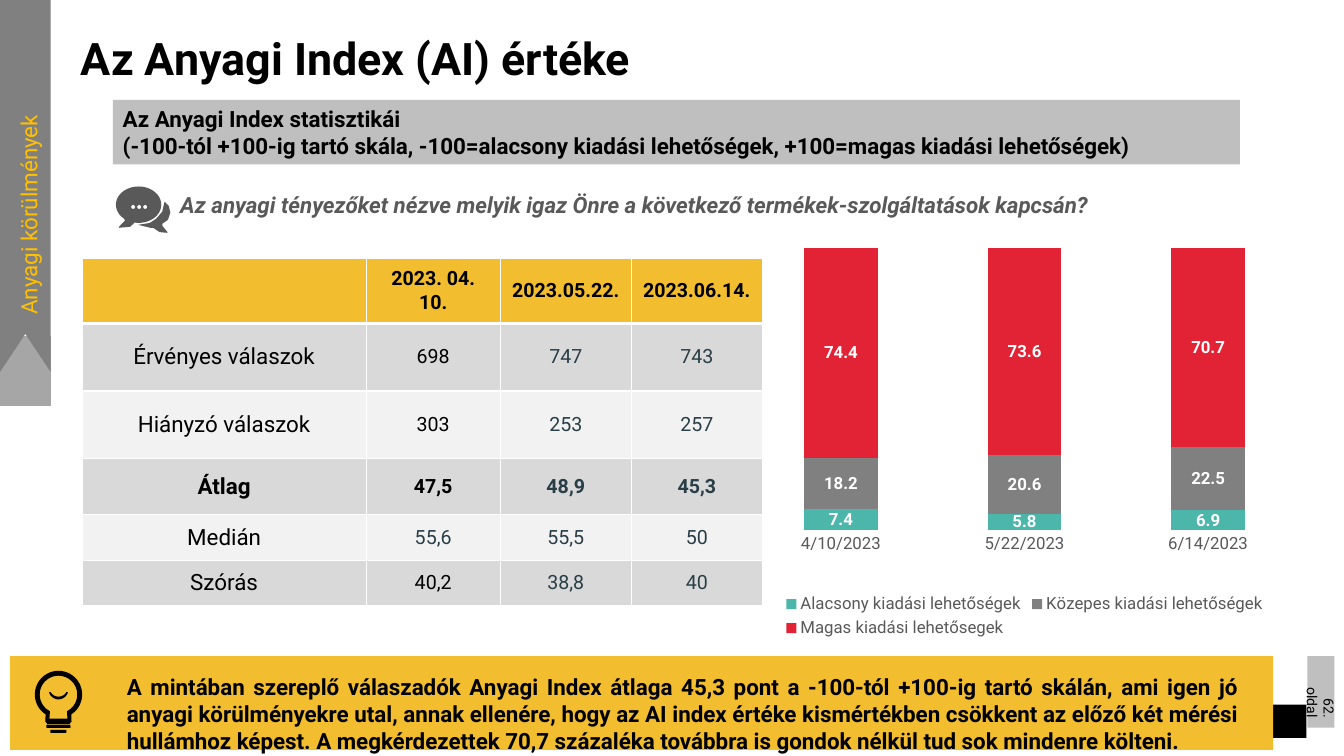
from math import cos, sin, radians

from lxml.etree import SubElement
from pptx import Presentation
from pptx.chart.data import CategoryChartData as ChartData
from pptx.dml.color import RGBColor as RGB
from pptx.enum.chart import XL_CHART_TYPE as Kind, XL_LABEL_POSITION as Spot
from pptx.enum.chart import XL_LEGEND_POSITION as Side, XL_TICK_MARK as Tick
from pptx.enum.shapes import MSO_SHAPE as Form
from pptx.enum.text import MSO_ANCHOR as Anchor, PP_ALIGN as Align
from pptx.oxml import parse_xml
from pptx.oxml.ns import nsdecls, qn
from pptx.util import Pt

FONT = "Roboto"
HUES = {
    "black": "000000", "white": "FFFFFF", "gold": "F2BE30", "amber": "FFC000",
    "dark": "595959", "mid": "808080", "soft": "A6A6A6", "light": "BFBFBF",
    "band": "D9D9D9", "pale": "F2F2F2", "slate": "293E47",
    "teal": "4BB6A9", "red": "E22335",
}
ROWS = [
    ("", "2023. 04. 10.", "2023.05.22.", "2023.06.14."),
    ("Érvényes válaszok", "698", "747", "743"),
    ("Hiányzó válaszok", "303", "253", "257"),
    ("Átlag", "47,5", "48,9", "45,3"),
    ("Medián", "55,6", "55,5", "50"),
    ("Szórás", "40,2", "38,8", "40"),
]
DATES = ("4/10/2023", "5/22/2023", "6/14/2023")
SERIES = [
    ("Alacsony kiadási lehetőségek", (7.4, 5.8, 6.9), "teal"),
    ("Közepes kiadási lehetőségek", (18.2, 20.6, 22.5), "mid"),
    ("Magas kiadási lehetősegek", (74.4, 73.6, 70.7), "red"),
]
INSIGHT = (
    "A mintában szereplő válaszadók Anyagi Index átlaga 45,3 pont a -100-tól "
    "+100-ig tartó skálán, ami igen jó anyagi körülményekre utal, annak ellenére, "
    "hogy az AI index értéke kismértékben csökkent az előző két mérési hullámhoz "
    "képest. A megkérdezettek 70,7 százaléka továbbra is gondok nélkül tud sok "
    "mindenre költeni."
)


def hue(name):
    """Return the named colour."""
    return RGB.from_string(HUES[name])


def style(font, size, color, bold=False, italic=False):
    """Set the look of a font."""
    font.name, font.size = FONT, Pt(size)
    font.bold, font.italic = bold, italic
    font.color.rgb = hue(color)


def paint(shape, color):
    """Fill a shape and drop its line and shadow."""
    shape.shadow.inherit = False
    shape.fill.solid()
    shape.fill.fore_color.rgb = hue(color)
    shape.line.fill.background()


def write(shape, text, size, color, bold=False, italic=False, align=Align.LEFT):
    """Put one styled paragraph into a shape."""
    frame = shape.text_frame
    frame.word_wrap = True
    frame.text = text
    para = frame.paragraphs[0]
    para.alignment = align
    for run in para.runs:
        style(run.font, size, color, bold, italic)
    return frame


def block(slide, box, color, form=Form.RECTANGLE):
    """Add a filled preset shape."""
    shape = slide.shapes.add_shape(form, *map(Pt, box))
    paint(shape, color)
    return shape


def label(slide, box, *args, **looks):
    """Add a text box and return it."""
    shape = slide.shapes.add_textbox(*map(Pt, box))
    write(shape, *args, **looks)
    return shape


def arc(x, y, wide, high, start, end):
    """List points along an ellipse between two angles."""
    turns = [radians(start + (end - start) * i / 40) for i in range(41)]
    return [(x + wide * cos(t), y + high * sin(t)) for t in turns]


def trace(slide, color, *loops):
    """Draw closed outlines as one shape; inner loops are holes."""
    fine = [[(x * 100, y * 100) for x, y in loop] for loop in loops]
    pen = slide.shapes.build_freeform(*fine[0][0], scale=Pt(1) / 100)
    pen.add_line_segments(fine[0][1:])
    for loop in fine[1:]:
        pen.move_to(*loop[0])
        pen.add_line_segments(loop[1:])
    paint(pen.convert_to_shape(), color)


def ribbon(slide):
    """Draw the side ribbon with its section name."""
    trace(slide, "soft", [(0, 290), (36.2, 290), (36.2, 240), (0, 240)])
    trace(slide, "mid", [(0, 265.7), (18.1, 238.5), (36.2, 265.7), (36.2, 0), (0, 0)])
    name = label(slide, (-79.2, 118.8, 199.4, 26.6), "Anyagi körülmények", 16, "amber")
    name.rotation = 270


def bulb(slide):
    """Draw the smiling light bulb."""
    x, y = 41.8, 496.1
    trace(
        slide, "black",
        arc(x, y, 16.9, 16.9, 123, 417) + [(51.1, 515.5), (49.7, 517), (33.8, 517), (32.4, 515.5)],
        arc(x, y, 13.4, 13.4, 117, 423) + [(48.2, 513.4), (35.3, 513.4)],
        arc(x, 492, 7.2, 7.6, 160, 20) + arc(x, 492, 6.2, 5.6, 25, 155),
    )
    block(slide, (33.1, 517.7, 17.3, 2.2), "black", Form.ROUNDED_RECTANGLE)
    block(slide, (36, 521.3, 11.5, 2.2), "black", Form.ROUNDED_RECTANGLE)


def chat(slide):
    """Draw the two speech bubbles."""
    trace(slide, "dark", [
        (98.6, 160.6), (107, 159.3), (111.6, 156.2), (115.9, 151.2), (117.4, 144.7),
        (117.4, 144), (120.5, 147), (121.7, 151.9), (120, 157), (116, 159.8),
        (116, 161.3), (119.5, 165.6), (119.5, 166.3), (114, 165.8),
        (109.4, 162.7), (107.3, 162.7)])
    tail = [(92.9, 162), (85, 162.7), (85, 162), (89.3, 157.5)]
    dots = [arc(99.4 + gap, 147.8, 1.4, 1.4, 0, 360) for gap in (-4.3, 0, 4.3)]
    trace(slide, "dark", arc(99, 146.2, 16.2, 13, 130, 460) + tail, *dots)


def edge(cell, base):
    """Give a cell white borders, with its own width at the base."""
    props = cell._tc.get_or_add_tcPr()
    for spot, (tag, wide) in enumerate(zip(("lnL", "lnR", "lnT", "lnB"), (1, 1, 1, base))):
        props.insert(spot, parse_xml(
            f'<a:{tag} {nsdecls("a")} w="{Pt(wide)}"><a:solidFill>'
            f'<a:srgbClr val="{HUES["white"]}"/></a:solidFill></a:{tag}>'))


def grid(slide):
    """Add the table of statistics."""
    table = slide.shapes.add_table(6, 4, Pt(58.6), Pt(184.3), Pt(486), Pt(248.3)).table
    for col, wide in zip(table.columns, (203, 95.8, 93.6, 93.6)):
        col.width = Pt(wide)
    for row, high in zip(table.rows, (46.8, 48.2, 48.2, 40.3, 32.4, 32.4)):
        row.height = Pt(high)
    for r, texts in enumerate(ROWS):
        fill = "gold" if r == 0 else ("pale", "band")[r % 2]
        for c, text in enumerate(texts):
            cell = table.cell(r, c)
            cell.fill.solid()
            cell.fill.fore_color.rgb = hue(fill)
            cell.vertical_anchor = Anchor.MIDDLE
            cell.text = text
            para = cell.text_frame.paragraphs[0]
            para.alignment = Align.CENTER
            slate = r > 0 and (c > 1 or text == "55,6")
            size = 14 if c else 16
            for run in para.runs:
                style(run.font, size, "slate" if slate else "black", r in (0, 3))
            edge(cell, 1 if r else 3)


def stack(slide):
    """Add the stacked column chart."""
    data = ChartData(number_format="0.0")
    data.categories = DATES
    for name, vals, _ in SERIES:
        data.add_series(name, vals)
    box = map(Pt, (529.9, 164.2, 403.9, 294.5))
    chart = slide.shapes.add_chart(Kind.COLUMN_STACKED, *box, data).chart
    style(chart.font, 10, "black")
    chart.has_title = False
    chart.has_legend = True
    chart.legend.position = Side.BOTTOM
    chart.legend.include_in_layout = False
    style(chart.legend.font, 12, "dark")
    axis = chart.category_axis
    axis.major_tick_mark = Tick.NONE
    axis.format.line.fill.background()
    style(axis.tick_labels.font, 12, "dark")
    scale = chart.value_axis
    scale.minimum_scale, scale.maximum_scale = 0, 100
    scale.has_major_gridlines = scale.visible = False
    plot = chart.plots[0]
    plot.gap_width, plot.overlap, plot.vary_by_categories = 150, 100, False
    for part, (_, _, color) in zip(plot.series, SERIES):
        part.format.fill.solid()
        part.format.fill.fore_color.rgb = hue(color)
        tags = part.data_labels
        tags.show_value, tags.position = True, Spot.CENTER
        tags.number_format, tags.number_format_is_linked = "0.0", False
        style(tags.font, 12, "white", True)
    area = chart._chartSpace.chart.plotArea
    for old in area.findall(qn("c:layout")):
        area.remove(old)
    lay = parse_xml(f'<c:layout {nsdecls("c")}><c:manualLayout/></c:layout>')
    for tag, val in (("layoutTarget", "inner"), ("xMode", "edge"), ("yMode", "edge"),
                     ("x", 0.013), ("y", 0.043), ("w", 0.974), ("h", 0.685)):
        SubElement(lay[0], qn("c:" + tag)).set("val", str(val))
    area.insert(0, lay)


def main():
    """Build and save the slide."""
    deck = Presentation()
    deck.slide_width, deck.slide_height = Pt(960), Pt(540)
    slide = deck.slides.add_slide(deck.slide_layouts[6])
    block(slide, (909.4, 503.3, 23.8, 23.8), "black")
    title = label(slide, (36, 23, 690.5, 80), "Az Anyagi Index (AI) értéke", 32, "black", bold=True)
    title.text_frame.margin_left = Pt(21.6)
    title.text_frame.paragraphs[0].line_spacing = 0.9
    page = block(slide, (933.8, 468.7, 19.4, 51.1), "light")
    frame = write(page, "62. oldal", 10, "black", align=Align.RIGHT)
    frame._txBody.bodyPr.set("vert", "vert")
    ribbon(slide)
    label(slide, (121.7, 133.2, 828, 39.6),
          "Az anyagi tényezőket nézve melyik igaz Önre a következő termékek-szolgáltatások kapcsán?",
          16, "dark", bold=True, italic=True)
    block(slide, (7.2, 468.7, 902.2, 67), "gold")
    label(slide, (83.5, 477.4, 808.6, 65.5), INSIGHT, 16, "black", bold=True, align=Align.JUSTIFY)
    bulb(slide)
    grid(slide)
    head = block(slide, (80.6, 71.3, 805, 46.1), "light")
    write(head, "Az Anyagi Index statisztikái\v(-100-tól +100-ig tartó skála, "
          "-100=alacsony kiadási lehetőségek, +100=magas kiadási lehetőségek)",
          16, "black", bold=True)
    chat(slide)
    stack(slide)
    deck.save("out.pptx")


if __name__ == "__main__":
    main()
